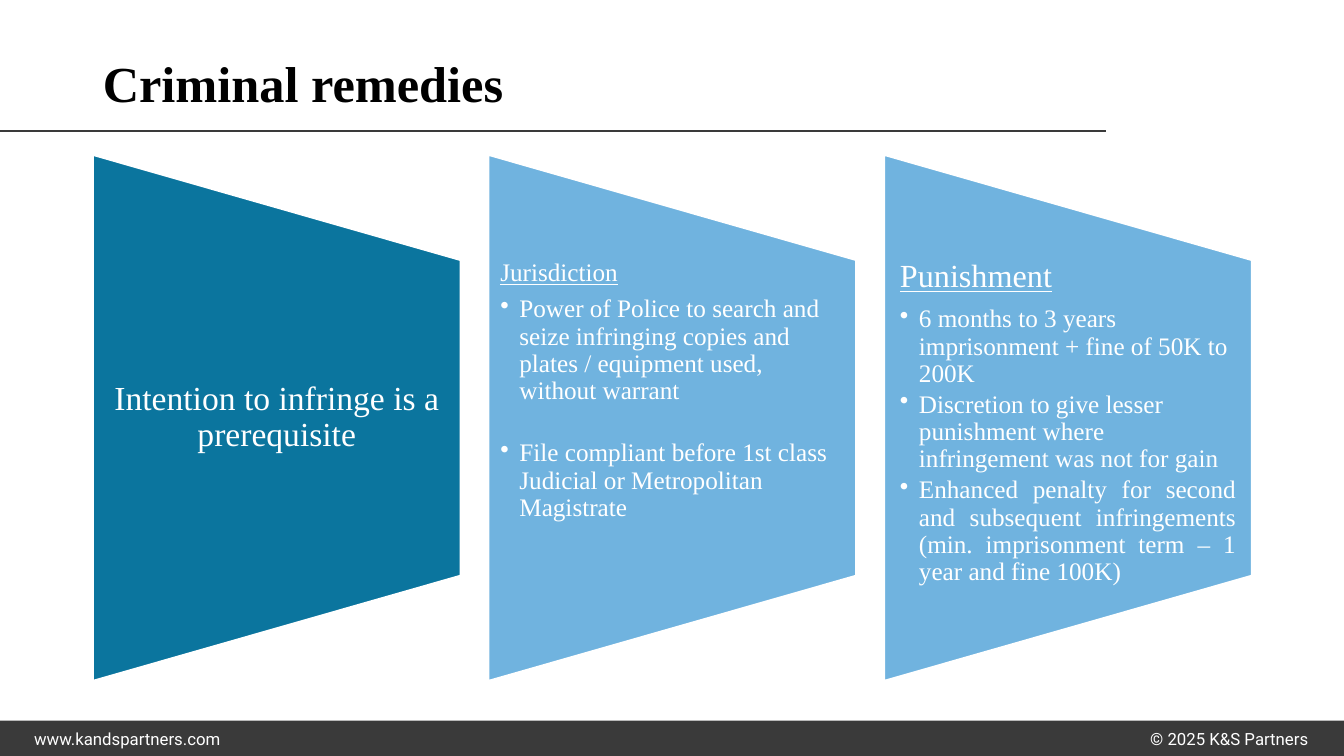
from lxml import etree
from pptx import Presentation
from pptx.dml.color import RGBColor
from pptx.enum.shapes import MSO_CONNECTOR, MSO_SHAPE
from pptx.enum.text import MSO_ANCHOR, MSO_AUTO_SIZE, PP_ALIGN
from pptx.oxml.ns import qn
from pptx.util import Cm, Pt

RECT = MSO_SHAPE.RECTANGLE
TRAPEZOID = MSO_SHAPE.FLOWCHART_MANUAL_OPERATION
STRAIGHT = MSO_CONNECTOR.STRAIGHT
TOP, MIDDLE = MSO_ANCHOR.TOP, MSO_ANCHOR.MIDDLE
NO_FIT = MSO_AUTO_SIZE.NONE
LEFT, CENTER, JUSTIFY = PP_ALIGN.LEFT, PP_ALIGN.CENTER, PP_ALIGN.JUSTIFY

WHITE = RGBColor(0xFF, 0xFF, 0xFF)
BLACK = RGBColor(0, 0, 0)
CHARCOAL = RGBColor(0x3A, 0x3A, 0x3A)
TEAL = RGBColor(0x0B, 0x75, 0x9E)
SKY = RGBColor(0x70, 0xB3, 0xDF)

SERIF, SANS = "Times New Roman", "Roboto"
PANEL_W, PANEL_H, TEXT_H = 9.27, 13.26, 7.95
PANEL_X, PANEL_STEP, PANEL_MID = 2.34, 9.97, 10.53


def heading(text, size):
    return dict(text=text, size=size, underline=True, after=size * 0.35)


def bullet(text, after=2.7, align=LEFT):
    return dict(text=text, size=18, bullet=True, after=after, align=align)


PANELS = [
    (TEAL, 0.43, MIDDLE, [
        dict(text="Intention to infringe is a prerequisite", size=24, align=CENTER),
    ]),
    (SKY, 0.3, TOP, [
        heading("Jurisdiction", 18),
        bullet("Power of Police to search and seize infringing copies and "
               "plates / equipment used, without warrant", after=25),
        bullet("File compliant before 1st class Judicial or Metropolitan Magistrate"),
    ]),
    (SKY, 0.4, TOP, [
        heading("Punishment", 23),
        bullet("6 months to 3 years imprisonment + fine of 50K to 200K"),
        bullet("Discretion to give lesser punishment where infringement was not for gain"),
        bullet("Enhanced penalty for second and subsequent infringements "
               "(min. imprisonment term – 1 year and fine 100K)", align=JUSTIFY),
    ]),
]


class Deck:
    def __init__(self, width, height):
        self.prs = Presentation()
        self.prs.slide_width, self.prs.slide_height = Cm(width), Cm(height)
        self.s = self.prs.slides.add_slide(self.prs.slide_layouts[5])

    def format(self, obj, values):
        for name, value in values.items():
            setattr(obj, name, value)

    def paragraph(self, p, text, size, font=SERIF, color=WHITE, bold=False,
                  underline=False, align=LEFT, spacing=0.9, after=0, bullet=False):
        if bullet:
            pPr = p._p.get_or_add_pPr()
            pPr.set("marL", str(Cm(0.48)))
            pPr.set("indent", str(-Cm(0.48)))
            etree.SubElement(pPr, qn("a:buChar")).set("char", "•")
        self.format(p, dict(level=int(bullet), alignment=align, line_spacing=spacing,
                            space_before=Pt(0), space_after=Pt(after)))
        r = p.add_run()
        r.text = text
        self.format(r.font, dict(name=font, size=Pt(size), bold=bold, underline=underline))
        r.font.color.rgb = color

    def frame(self, tf, paragraphs, anchor=MIDDLE, inset=0.25, edge=0.13):
        self.format(tf, dict(word_wrap=True, auto_size=NO_FIT, vertical_anchor=anchor,
                             margin_left=Cm(inset), margin_right=Cm(inset),
                             margin_top=Cm(edge), margin_bottom=Cm(edge)))
        for i, values in enumerate(paragraphs):
            self.paragraph(tf.add_paragraph() if i else tf.paragraphs[0], **values)

    def title(self, x, y, w, h, text):
        sp = self.s.shapes.title
        self.format(sp, dict(left=Cm(x), top=Cm(y), width=Cm(w), height=Cm(h)))
        self.frame(sp.text_frame, [dict(text=text, size=36, color=BLACK, bold=True)])

    def text(self, x, y, w, h, paragraphs, **values):
        sp = self.s.shapes.add_textbox(Cm(x), Cm(y), Cm(w), Cm(h))
        self.frame(sp.text_frame, paragraphs, **values)

    def shape(self, kind, x, y, w, h, fill, outline=None, rotation=0):
        sp = self.s.shapes.add_shape(kind, Cm(x), Cm(y), Cm(w), Cm(h))
        sp.shadow.inherit = False
        sp.rotation = rotation
        sp.fill.solid()
        sp.fill.fore_color.rgb = fill
        if outline is None:
            sp.line.fill.background()
        else:
            sp.line.color.rgb = outline
            sp.line.width = Pt(1.5)

    def rule(self, x1, x2, y):
        c = self.s.shapes.add_connector(STRAIGHT, Cm(x1), Cm(y), Cm(x2), Cm(y))
        c.line.color.rgb = CHARCOAL
        c.line.width = Pt(1)
        etree.SubElement(c._element.spPr, qn("a:effectLst"))

    def panel(self, x, fill, inset, anchor, paragraphs):
        self.shape(TRAPEZOID, x + (PANEL_W - PANEL_H) / 2, PANEL_MID - PANEL_W / 2,
                   PANEL_H, PANEL_W, fill, WHITE, 270)
        self.text(x, PANEL_MID - TEXT_H / 2, PANEL_W, TEXT_H, paragraphs,
                  anchor=anchor, inset=inset, edge=0)


def main():
    deck = Deck(33.87, 19.05)
    footer = dict(size=12, font=SANS, spacing=1.0)
    deck.shape(RECT, 0, 18.16, 33.87, 0.89, CHARCOAL)
    deck.text(0.61, 18.16, 5.79, 0.89, [dict(text="www.kandspartners.com", **footer)])
    deck.text(28.4, 18.19, 5.16, 0.86,
              [dict(text="© 2025 K&S Partners", align=CENTER, **footer)])
    deck.rule(0, 27.86, 3.3)
    deck.title(2.34, 1.02, 25.53, 2.29, "Criminal remedies")
    for i, panel in enumerate(PANELS):
        deck.panel(PANEL_X + i * PANEL_STEP, *panel)
    deck.prs.save("out.pptx")


if __name__ == "__main__":
    main()
